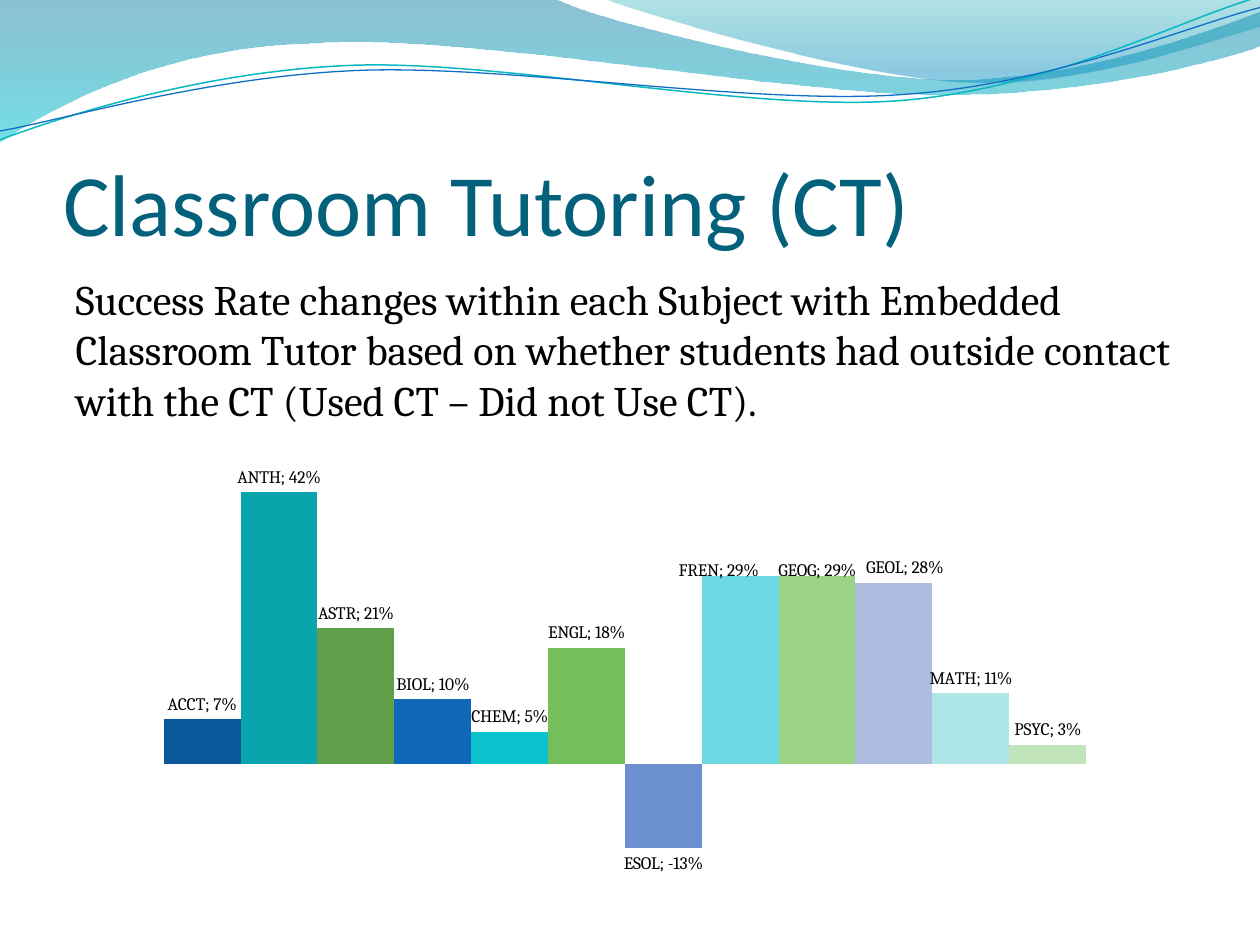
from lxml.etree import SubElement
from pptx import Presentation
from pptx.chart.data import CategoryChartData
from pptx.dml.color import RGBColor
from pptx.enum.chart import XL_CHART_TYPE, XL_LABEL_POSITION
from pptx.enum.text import MSO_ANCHOR, MSO_AUTO_SIZE, PP_ALIGN
from pptx.oxml.ns import qn
from pptx.util import Inches, Pt

COLORS = {
    "title": "04617B", "text": "000000",
    "band_top": "0074A1", "band_bottom": "00C6CF",
    "crest_top": "00A1A9", "crest_bottom": "008BBF",
    "teal_line": "0AB8BF", "blue_line": "0F6FC6",
}

# Subject, change in success rate, bar colour
SUBJECTS = [
    ("ACCT", 0.07, "0A5899"), ("ANTH", 0.42, "09A5AC"), ("ASTR", 0.21, "619F4B"),
    ("BIOL", 0.10, "0F67B9"), ("CHEM", 0.05, "0AC3CC"), ("ENGL", 0.18, "74BE5C"),
    ("ESOL", -0.13, "6C8FD0"), ("FREN", 0.29, "6CD8E1"), ("GEOG", 0.29, "9AD386"),
    ("GEOL", 0.28, "AEBCE0"), ("MATH", 0.11, "AEE6E8"), ("PSYC", 0.03, "C1E4BA"),
]
# Label shifts as shares of the chart's size
LABEL_SHIFTS = {"FREN": (-0.02, 0.02), "GEOG": (0, 0.02), "GEOL": (0.01, 0)}

# Each outline is a list of runs; a run is a start point and its cubic curves
BAND = [
    [(0, 0)],
    [(4.4, -0.01), (4.76, 0.17, 6.64, 0.63, 7.58, 0.63), (8.53, 0.63, 9.58, 0.26, 10, 0.09)],
    [(10.01, 0.36), (9.83, 0.44, 8.7, 0.76, 7.46, 0.75), (6.22, 0.75, 3.82, 0.28, 2.57, 0.34),
     (1.29, 0.36, 0.46, 0.83, -0.01, 1.13)],
]
CREST = [
    [(4.79, -0.01), (5.09, 0.11, 6.82, 0.62, 7.69, 0.65), (8.56, 0.69, 9.61, 0.32, 10, 0.21)],
    [(10, 0)],
]
TEAL_WAVE = [[(0, 1.11), (0.48, 0.93, 1.58, 0.57, 2.77, 0.52),
              (3.95, 0.47, 5.93, 0.89, 7.13, 0.8), (8.33, 0.71, 9.38, 0.15, 9.98, -0.02)]]
BLUE_WAVE = [[(0, 1.04), (0.47, 0.96, 1.64, 0.61, 2.83, 0.56),
              (4.03, 0.51, 5.97, 0.84, 7.17, 0.75), (8.36, 0.67, 9.41, 0.21, 10, 0.06)]]


def rgb(name):
    return RGBColor.from_string(COLORS.get(name, name))


def add_outline(slide, runs, close):
    """Draw the runs as a freeform, then join the three points of each curve into a cubic."""
    points, curve_starts = [], []
    for start, *curves in runs:
        points.append(start)
        for curve in curves:
            curve_starts.append(len(points))
            points += zip(curve[::2], curve[1::2])
    first, *rest = [(Inches(x), Inches(y)) for x, y in points]
    builder = slide.shapes.build_freeform(*first)
    builder.add_line_segments(rest, close=close)
    shape = builder.convert_to_shape()
    shape.shadow.inherit = False
    outline = next(shape._element.iter(qn("a:path")))
    segments = list(outline)
    for index in curve_starts:
        cubic = SubElement(outline, qn("a:cubicBezTo"))
        segments[index].addprevious(cubic)
        for segment in segments[index:index + 3]:
            cubic.append(segment[0])
            outline.remove(segment)
    return shape


def add_gradient_area(slide, runs, stops):
    """Fill an outline from top to bottom; a stop is position, colour, opacity in percent."""
    shape = add_outline(slide, runs, True)
    shape.line.fill.background()
    shape.fill.gradient()
    shape.fill.gradient_angle = 270
    for gradient_stop, (position, color, _) in zip(shape.fill.gradient_stops, stops):
        gradient_stop.position = position
        gradient_stop.color.rgb = rgb(color)
    for element, (_, _, opacity) in zip(shape._element.iter(qn("a:srgbClr")), stops):
        SubElement(element, qn("a:alpha")).set("val", str(opacity * 1000))


def add_wave_line(slide, runs, color, width):
    shape = add_outline(slide, runs, False)
    shape.fill.background()
    shape.line.color.rgb = rgb(color)
    shape.line.width = Pt(width)


def add_waves(slide):
    add_gradient_area(slide, BAND, [(0, "band_top", 45), (1, "band_bottom", 55)])
    add_gradient_area(slide, CREST, [(0, "crest_top", 30), (0.8, "crest_bottom", 45)])
    add_wave_line(slide, TEAL_WAVE, "teal_line", 0.85)
    add_wave_line(slide, BLUE_WAVE, "blue_line", 0.75)


def place(shape, box):
    shape.left, shape.top, shape.width, shape.height = map(Inches, box)


def fill_placeholder(slide, placeholder, box, text, font_name, size, color):
    """Move a placeholder to the box, in front of what is drawn, and set its text."""
    slide.shapes._spTree.append(placeholder._element)
    place(placeholder, box)
    frame = placeholder.text_frame
    frame.text = text
    frame.word_wrap = True
    frame.auto_size = MSO_AUTO_SIZE.NONE
    paragraph = frame.paragraphs[0]
    paragraph.alignment = PP_ALIGN.LEFT
    font = paragraph.font
    font.name, font.size, font.color.rgb = font_name, Pt(size), rgb(color)
    return frame


def add_title(slide, box):
    frame = fill_placeholder(slide, slide.shapes.title, box, "Classroom Tutoring (CT)",
                             "Calibri", 50, "title")
    frame.vertical_anchor = MSO_ANCHOR.BOTTOM
    frame.margin_left = frame.margin_right = frame.margin_bottom = 0


def add_body(slide, box):
    frame = fill_placeholder(
        slide, slide.placeholders[1], box,
        "Success Rate changes within each Subject with Embedded Classroom Tutor based on "
        "whether students had outside contact with the CT (Used CT – Did not Use CT).",
        "Cambria", 24, "text")
    paragraph = frame.paragraphs[0]
    paragraph.space_before = Pt(4.8)
    properties = paragraph._p.get_or_add_pPr()
    properties.set("marL", "0")
    properties.set("indent", "0")
    bullet = SubElement(properties, qn("a:buNone"))
    properties.find(qn("a:defRPr")).addprevious(bullet)


def add_manual_layout(parent, after, values):
    """Add a c:layout to a chart part, behind the given child or in front of all."""
    layout = SubElement(parent, qn("c:layout"))
    manual = SubElement(layout, qn("c:manualLayout"))
    for tag, value in values.items():
        SubElement(manual, qn(f"c:{tag}")).set("val", str(value))
    if after is None:
        parent.insert(0, layout)
    else:
        after.addnext(layout)


def show_name_and_value(labels):
    for tag in ("showVal", "showSerName"):
        labels.find(qn(f"c:{tag}")).set("val", "1")
    separator = SubElement(labels, qn("c:separator"))
    separator.text = "; "
    labels.find(qn("c:showBubbleSize")).addnext(separator)


def format_series(series, color):
    series.format.fill.solid()
    series.format.fill.fore_color.rgb = rgb(color)
    series.invert_if_negative = False
    labels = series.data_labels
    labels.number_format, labels.number_format_is_linked = "0%", False
    labels.position = XL_LABEL_POSITION.OUTSIDE_END
    show_name_and_value(labels._element)
    if series.name in LABEL_SHIFTS:
        series.points[0].data_label.position = XL_LABEL_POSITION.OUTSIDE_END
        label = labels._element.find(qn("c:dLbl"))
        show_name_and_value(label)
        add_manual_layout(label, label.find(qn("c:idx")),
                          dict(zip("xy", LABEL_SHIFTS[series.name])))


def add_success_chart(slide, box):
    data = CategoryChartData(number_format="0%")
    data.categories = ["1"]
    for name, change, _ in SUBJECTS:
        data.add_series(name, [change])
    chart = slide.shapes.add_chart(XL_CHART_TYPE.COLUMN_CLUSTERED, *map(Inches, box), data).chart
    chart.has_legend = chart.has_title = False
    chart.font.name, chart.font.size, chart.font.color.rgb = "Cambria", Pt(10), rgb("text")
    chart.category_axis.visible = chart.value_axis.visible = False
    chart.value_axis.has_major_gridlines = False
    chart.value_axis.minimum_scale, chart.value_axis.maximum_scale = -0.2, 0.5
    plot = chart.plots[0]
    plot.gap_width, plot.overlap, plot.vary_by_categories = 150, 0, False
    for series, (_, _, color) in zip(plot.series, SUBJECTS):
        format_series(series, color)
    plot_area = chart._chartSpace.find(f".//{qn('c:plotArea')}")
    for layout in plot_area.findall(qn("c:layout")):
        plot_area.remove(layout)
    add_manual_layout(plot_area, None, {"layoutTarget": "inner", "xMode": "edge", "yMode": "edge",
                                        "x": 0.02, "y": 0.02, "w": 0.96, "h": 0.96})


def main():
    presentation = Presentation()
    presentation.slide_width, presentation.slide_height = Inches(10), Inches(7.5)
    slide = presentation.slides.add_slide(presentation.slide_layouts[1])
    add_waves(slide)
    add_title(slide, (0.5, 0.77, 9, 1.25))
    add_body(slide, (0.5, 2.12, 9, 1.38))
    add_success_chart(slide, (0.67, 3.42, 8.58, 3.75))
    presentation.save("out.pptx")


if __name__ == "__main__":
    main()
